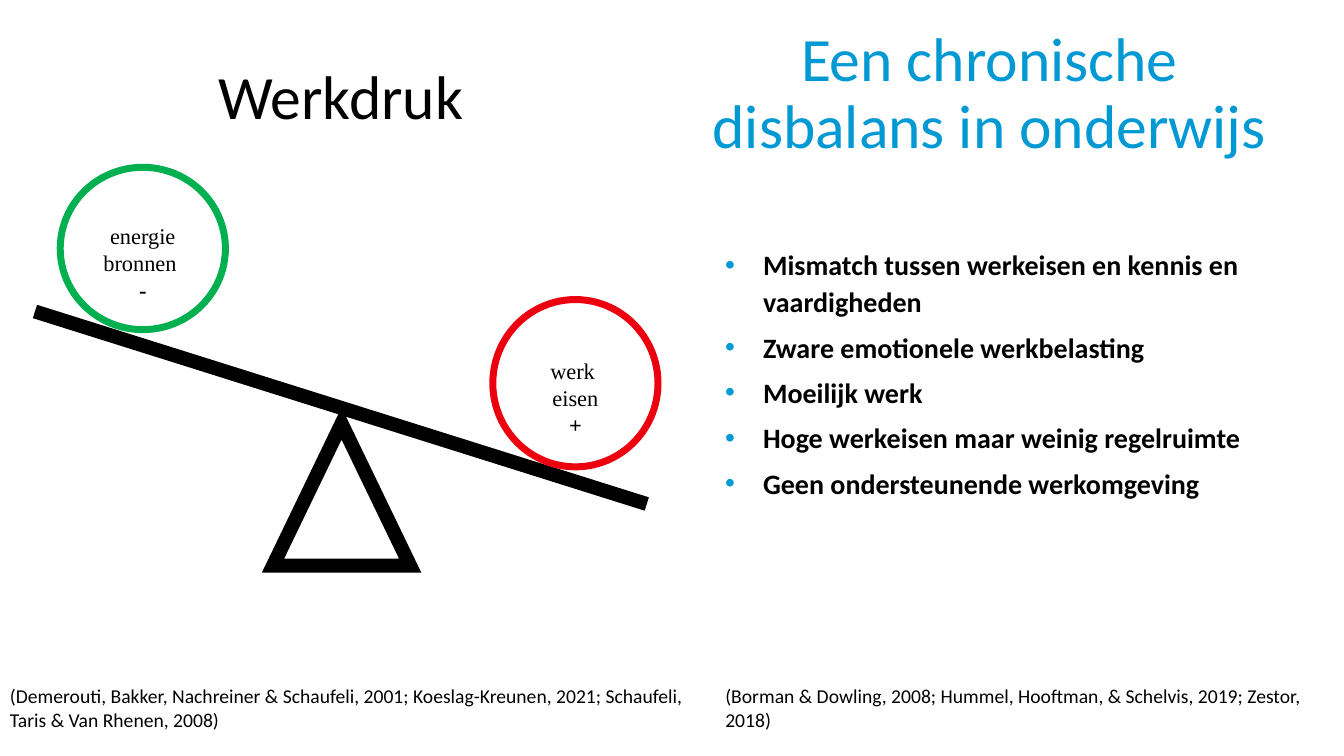
"""Build the slide on workload as a seesaw of demands and resources."""
from lxml import etree
from pptx import Presentation
from pptx.dml.color import RGBColor
from pptx.enum import shapes, text
from pptx.oxml import ns
from pptx.util import Pt

BLUE, BLACK, WHITE = "0099D4", "000000", "FFFFFF"
SANS, SERIF = "Calibri", "Times New Roman"

TITLE = ("Een chronische disbalans in onderwijs", (497, 16, 427, 104))
LIST_BOX = (518, 171, 414, 217)
POINTS = [
    "Mismatch tussen werkeisen en kennis en vaardigheden",
    "Zware emotionele werkbelasting",
    "Moeilijk werk",
    "Hoge werkeisen maar weinig regelruimte",
    "Geen ondersteunende werkomgeving",
]
HEAD = ("Werkdruk", (87, 18, 313, 100))
CITES = [
    ("(Borman & Dowling, 2008; Hummel, Hooftman, & Schelvis, 2019; Zestor, 2018)",
     (511, 485, 427, 41)),
    ("(Demerouti, Bakker, Nachreiner & Schaufeli, 2001; Koeslag-Kreunen, 2021; "
     "Schaufeli, Taris & Van Rhenen, 2008)", (0, 485, 497, 41)),
]
BEAM = (25, 222.5, 462, 360)
STAND = (195, 302.5, 98, 101.5)
BALLS = [
    (["werk ", "eisen", "+"], "EC0010", (352, 214, 118, 119.5)),
    (["energie bronnen ", "-"], "00B050", (43, 119.5, 118, 116)),
]
BALL_DROP = 20


def paint(code):
    return RGBColor.from_string(code)


def pts(box):
    return [Pt(n) for n in box]


def place(shape, box):
    shape.left, shape.top, shape.width, shape.height = pts(box)


def write(frame, lines, size, color=BLACK, face=SANS, align=None, bold=False):
    frame.text = "\n".join(lines)
    frame.word_wrap = True
    frame.auto_size = text.MSO_AUTO_SIZE.NONE
    for para in frame.paragraphs:
        para.alignment = align
        for run in para.runs:
            run.font.size, run.font.name, run.font.bold = Pt(size), face, bold
            run.font.color.rgb = paint(color)


def add_note(slide, words, box, size, align=None):
    frame = slide.shapes.add_textbox(*pts(box)).text_frame
    write(frame, [words], size, align=align)
    return frame


def add_form(slide, kind, box, color, width):
    form = slide.shapes.add_shape(kind, *pts(box))
    form.shadow.inherit = False
    form.fill.solid()
    form.fill.fore_color.rgb = paint(WHITE)
    form.line.color.rgb = paint(color)
    form.line.width = Pt(width)
    return form


def add_beam(slide):
    beam = slide.shapes.add_connector(shapes.MSO_CONNECTOR.STRAIGHT, *pts(BEAM))
    beam.line.color.rgb = paint(BLACK)
    beam.line.width = Pt(10)
    etree.SubElement(beam._element.spPr, ns.qn("a:effectLst"))


def add_stand(slide):
    kind = shapes.MSO_SHAPE.ISOSCELES_TRIANGLE
    stand = add_form(slide, kind, STAND, BLACK, 10)
    edge = stand._element.spPr.find(ns.qn("a:ln"))
    etree.SubElement(edge, ns.qn("a:miter"), lim="800000")


def add_ball(slide, lines, color, box):
    ball = add_form(slide, shapes.MSO_SHAPE.OVAL, box, color, 5)
    frame = ball.text_frame
    write(frame, lines, 16, face=SERIF, align=text.PP_ALIGN.CENTER)
    frame.vertical_anchor = text.MSO_ANCHOR.MIDDLE
    frame.margin_top = Pt(3.6 + BALL_DROP)
    frame.paragraphs[-1].runs[0].font.bold = True


def set_bullet(para):
    props = para._p.get_or_add_pPr()
    props.set("marL", str(Pt(27)))
    props.set("indent", str(-Pt(27)))
    tint = etree.SubElement(props, ns.qn("a:buClr"))
    etree.SubElement(tint, ns.qn("a:srgbClr"), val=BLUE)
    etree.SubElement(props, ns.qn("a:buFont"), typeface="Arial")
    etree.SubElement(props, ns.qn("a:buChar"), char="•")


def fill_title(shape):
    words, box = TITLE
    place(shape, box)
    frame = shape.text_frame
    write(frame, [words], 44, BLUE, align=text.PP_ALIGN.CENTER)
    frame.margin_left = 0
    frame.vertical_anchor = text.MSO_ANCHOR.MIDDLE
    frame.paragraphs[0].line_spacing = 0.9


def fill_list(shape):
    place(shape, LIST_BOX)
    frame = shape.text_frame
    write(frame, POINTS, 20, bold=True)
    frame.margin_left = 0
    for para in frame.paragraphs:
        para.line_spacing = 1.1
        para.space_before = Pt(6)
        set_bullet(para)


def main():
    deck = Presentation()
    deck.slide_width, deck.slide_height = Pt(960), Pt(540)
    slide = deck.slides.add_slide(deck.slide_layouts[1])
    fill_title(slide.shapes.title)
    fill_list(slide.placeholders[1])
    for words, box in CITES:
        add_note(slide, words, box, 14)
    head = add_note(slide, *HEAD, 44, text.PP_ALIGN.CENTER)
    head.vertical_anchor = text.MSO_ANCHOR.MIDDLE
    add_beam(slide)
    add_stand(slide)
    for lines, color, box in BALLS:
        add_ball(slide, lines, color, box)
    deck.save("out.pptx")


if __name__ == "__main__":
    main()
